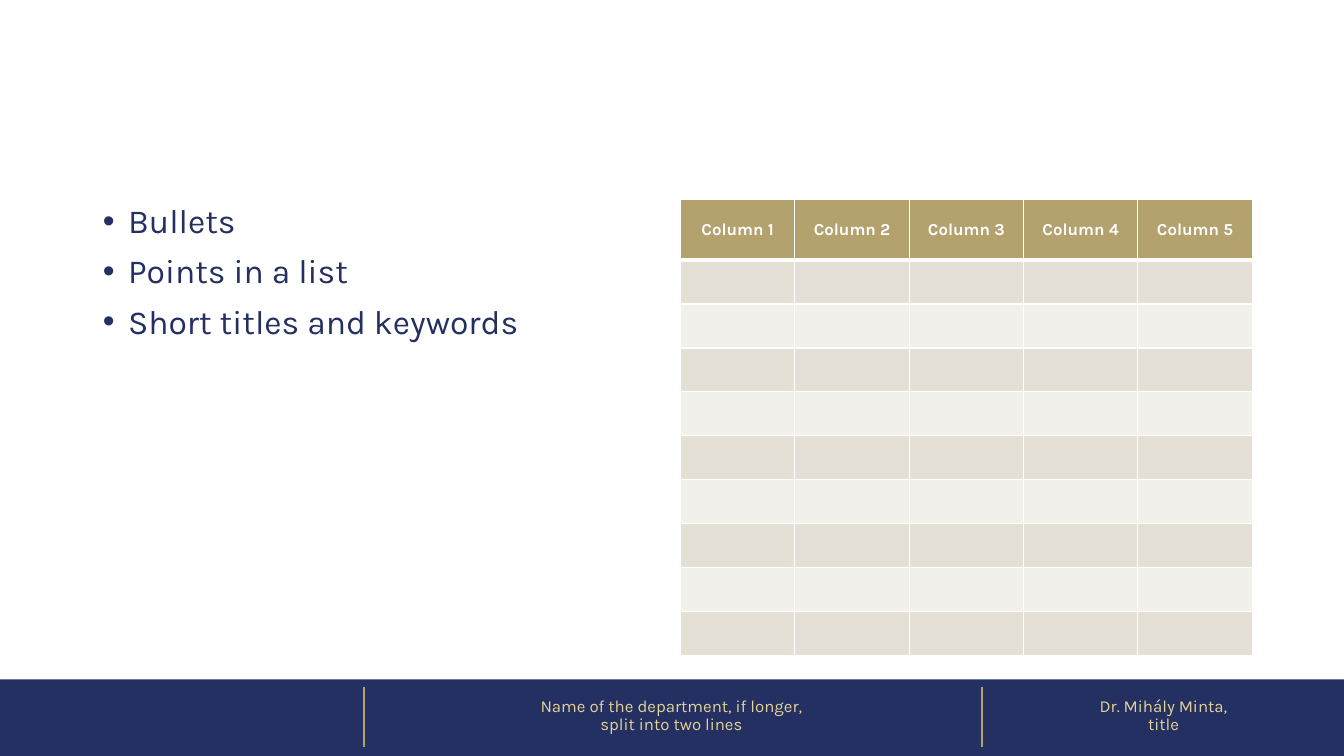
import pptx
import pptx.dml.color
import pptx.enum.shapes
import pptx.enum.text
import pptx.oxml.ns
import pptx.util
import lxml.etree

Inches = pptx.util.Inches
Pt = pptx.util.Pt
Align = pptx.enum.text.PP_ALIGN
Anchor = pptx.enum.text.MSO_ANCHOR
qn = pptx.oxml.ns.qn


def color(text):
    return pptx.dml.color.RGBColor.from_string(text)


def sub(node, tag, **attrs):
    return lxml.etree.SubElement(node, qn(tag), **attrs)


class Deck:
    font = "Karla"
    navy = "242F62"
    gold = "B3A16E"
    pale = "E3D496"
    white = "FFFFFF"
    bands = ("E5E0D5", "F2F0EB")

    def __init__(self):
        self.file = pptx.Presentation()
        self.file.slide_width = Inches(13.33)
        self.file.slide_height = Inches(7.5)
        self.slide = self.file.slides.add_slide(self.file.slide_layouts[1])
        title = self.slide.shapes.title.element
        title.getparent().remove(title)

    def style(self, font, size, tint, bold=False):
        font.name = self.font
        font.size = Pt(size)
        font.bold = bold
        font.color.rgb = color(tint)

    def bar(self, *box):
        kind = pptx.enum.shapes.MSO_SHAPE.RECTANGLE
        shape = self.slide.shapes.add_shape(kind, *map(Inches, box))
        shape.shadow.inherit = False
        shape.fill.solid()
        shape.fill.fore_color.rgb = color(self.navy)
        shape.line.fill.background()

    def rule(self, x, top, base):
        kind = pptx.enum.shapes.MSO_CONNECTOR.STRAIGHT
        line = self.slide.shapes.add_connector(
            kind, Inches(x), Inches(top), Inches(x), Inches(base))
        line.line.color.rgb = color(self.gold)
        line.line.width = Pt(1.5)
        sub(line.element.spPr, "a:effectLst")

    def label(self, box, lines):
        frame = self.slide.shapes.add_textbox(*map(Inches, box)).text_frame
        frame.word_wrap = True
        frame.vertical_anchor = Anchor.MIDDLE
        para = frame.paragraphs[0]
        para.alignment = Align.CENTER
        para.line_spacing = 0.9
        for i, text in enumerate(lines):
            if i:
                para.add_line_break()
            run = para.add_run()
            run.text = text
            self.style(run.font, 12, self.pale)

    def list(self, box, items):
        body = self.slide.placeholders[1]
        body.left, body.top, body.width, body.height = map(Inches, box)
        frame = body.text_frame
        for i, text in enumerate(items):
            para = frame.add_paragraph() if i else frame.paragraphs[0]
            para.line_spacing = 0.9
            para.space_before = Pt(10 if i else 0)
            props = para._p.get_or_add_pPr()
            props.set("marL", str(Inches(0.25)))
            props.set("indent", str(Inches(-0.25)))
            sub(props, "a:buFont", typeface="Arial")
            sub(props, "a:buChar", char="•")
            run = para.add_run()
            run.text = text
            self.style(run.font, 24, self.navy)

    def edges(self, cell, row):
        props = cell._tc.get_or_add_tcPr()
        heavy = {0: "B", 1: "T"}.get(row)
        for side in "LRTB":
            width = Pt(3 if side == heavy else 1)
            line = sub(props, "a:ln" + side, w=str(width))
            fill = sub(line, "a:solidFill")
            sub(fill, "a:srgbClr", val=self.white)

    def table(self, box, heads, rows, first, high):
        table = self.slide.shapes.add_table(
            rows + 1, len(heads), *map(Inches, box)).table
        for col in table.columns:
            col.width = Inches(box[2] / len(heads))
        for r, row in enumerate(table.rows):
            row.height = Inches(high if r else first)
            for c, cell in enumerate(row.cells):
                self.edges(cell, r)
                cell.fill.solid()
                tint = self.bands[(r - 1) % 2] if r else self.gold
                cell.fill.fore_color.rgb = color(tint)
                if r == 0:
                    cell.vertical_anchor = Anchor.MIDDLE
                    para = cell.text_frame.paragraphs[0]
                    para.alignment = Align.CENTER
                    run = para.add_run()
                    run.text = heads[c]
                    self.style(run.font, 12, self.white, True)


def main():
    deck = Deck()
    deck.bar(0, 6.74, 13.33, 0.76)
    for x in (3.61, 9.74):
        deck.rule(x, 6.82, 7.41)
    deck.label((3.59, 6.71, 6.14, 0.79),
               ["Name of the department, if longer,", "split into two lines"])
    deck.label((9.74, 6.71, 3.6, 0.79), ["Dr. Mihály Minta,", "title"])
    deck.list((0.92, 1.98, 5.67, 4.53),
              ["Bullets", "Points in a list", "Short titles and keywords"])
    heads = [f"Column {n}" for n in range(1, 6)]
    deck.table((6.75, 1.98, 5.67, 4.53), heads, 9, 0.6, 0.436)
    deck.file.save("out.pptx")


if __name__ == "__main__":
    main()
